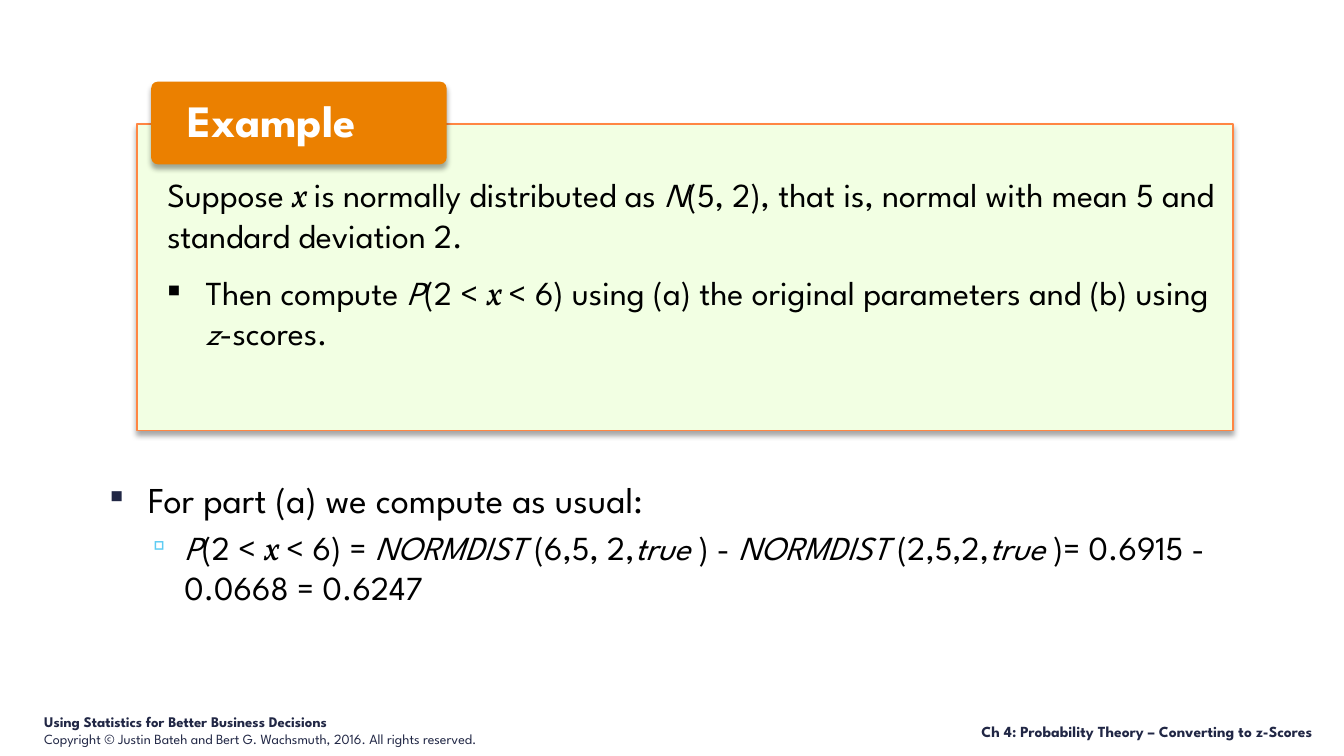
import pptx
import pptx.util
import pptx.dml.color
import pptx.enum.shapes
import pptx.enum.text
import pptx.oxml.ns
import lxml.etree
from dataclasses import dataclass

Inches = pptx.util.Inches
Pt = pptx.util.Pt
ANCHOR = pptx.enum.text.MSO_ANCHOR
SHAPE = pptx.enum.shapes.MSO_SHAPE


@dataclass(frozen=True)
class Theme:
    sans: str = "League Spartan"
    serif: str = "Vollkorn"
    ink: str = "000000"
    navy: str = "212745"
    sky: str = "5ECCF3"
    white: str = "FFFFFF"
    orange: str = "EB8000"
    border: str = "FF8643"
    panel: str = "F2FFE3"
    title: float = 32
    lead: float = 26
    body: float = 24
    chapter: float = 11
    book: float = 10.5
    rights: float = 10


THEME = Theme()
PLAIN, BOLD, ITALIC, VARIABLE = "plain", "bold", "italic", "variable"

EXAMPLE = [
    dict(runs=[("Suppose ", PLAIN), ("x ", VARIABLE),
               ("is normally distributed as ", PLAIN), ("N", ITALIC),
               ("(5, 2), that is, normal with mean 5 and standard deviation 2.", PLAIN)],
         before=6, after=6),
    dict(runs=[("Then compute ", PLAIN), ("P", ITALIC), ("(2 < ", PLAIN), ("x ", VARIABLE),
               ("< 6) using (a) the original parameters and (b) using ", PLAIN),
               ("z", ITALIC), ("-scores.", PLAIN)],
         before=6, after=6, bullet=("▪", THEME.ink, 100), indent=(0.38, -0.38)),
]
TAB = [dict(runs=[("Example", BOLD)], size=THEME.title, color=THEME.white, line=0.9)]
SOLUTION = [
    dict(runs=[("For part (a) we compute as usual:", PLAIN)], size=THEME.lead,
         before=7, bullet=("▪", THEME.navy, 95), indent=(0.45, -0.38)),
    dict(runs=[("P", ITALIC), ("(2 < ", PLAIN), ("x ", VARIABLE), ("< 6) = ", PLAIN),
               ("NORMDIST ", ITALIC), ("(6,5, 2,", PLAIN), ("true ", ITALIC), (") - ", PLAIN),
               ("NORMDIST ", ITALIC), ("(2,5,2,", PLAIN), ("true ", ITALIC),
               (")= 0.6915 - 0.0668 = 0.6247", PLAIN)],
         level=1, before=4.8, bullet=("▫", THEME.sky, 90), indent=(0.81, -0.31)),
]
BOOK = [
    dict(runs=[("Using Statistics for Better Business Decisions", BOLD)],
         size=THEME.book, color=THEME.navy),
    dict(runs=[("Copyright © Justin Bateh and Bert G. Wachsmuth, 2016. All rights reserved.", PLAIN)],
         size=THEME.rights, color=THEME.navy, after=1),
]
CHAPTER = [dict(runs=[("Ch 4: Probability Theory – Converting to z-Scores", BOLD)],
                size=THEME.chapter, color=THEME.navy, align=pptx.enum.text.PP_ALIGN.RIGHT)]


def rgb(value):
    return pptx.dml.color.RGBColor.from_string(value)


def add_element(parent, tag, **attributes):
    child = lxml.etree.SubElement(parent, pptx.oxml.ns.qn(tag))
    for name, value in attributes.items():
        child.set(name, str(value))
    return child


def add_bullet(para, bullet, indent):
    char, color, percent = bullet
    left, first = indent
    properties = para._p.get_or_add_pPr()
    properties.set("marL", str(Inches(left)))
    properties.set("indent", str(Inches(first)))
    add_element(add_element(properties, "a:buClr"), "a:srgbClr", val=color)
    add_element(properties, "a:buSzPct", val=percent * 1000)
    add_element(properties, "a:buFont", typeface=THEME.sans)
    add_element(properties, "a:buChar", char=char)


def write_para(para, runs, size=THEME.body, color=THEME.ink, before=0, after=0, line=1.0,
               level=0, align=pptx.enum.text.PP_ALIGN.LEFT, bullet=None, indent=None):
    para.level, para.alignment, para.line_spacing = level, align, line
    para.space_before, para.space_after = Pt(before), Pt(after)
    if bullet:
        add_bullet(para, bullet, indent)
    for words, style in runs:
        span = para.add_run()
        span.text = words
        span.font.name = THEME.serif if style == VARIABLE else THEME.sans
        span.font.size = Pt(size)
        span.font.bold = style == BOLD
        span.font.italic = style in (ITALIC, VARIABLE)
        span.font.color.rgb = rgb(color)


def write(box, paragraphs, insets=(0.1, 0.05, 0.1, 0.05), anchor=ANCHOR.TOP):
    frame = box.text_frame
    frame.word_wrap = True
    frame.vertical_anchor = anchor
    (frame.margin_left, frame.margin_top,
     frame.margin_right, frame.margin_bottom) = map(Inches, insets)
    for index, content in enumerate(paragraphs):
        para = frame.add_paragraph() if index else frame.paragraphs[0]
        write_para(para, **content)


def add_card(page, kind, place, fill, border=None):
    card = page.shapes.add_shape(kind, *map(Inches, place))
    card.fill.solid()
    card.fill.fore_color.rgb = rgb(fill)
    if border:
        card.line.color.rgb = rgb(border)
        card.line.width = Pt(1)
    else:
        card.line.fill.background()
    card.shadow.inherit = False
    effects = card._element.spPr.find(pptx.oxml.ns.qn("a:effectLst"))
    shadow = add_element(effects, "a:outerShdw", blurRad=Pt(4), dist=Pt(3),
                         dir=90 * 60000, rotWithShape=0)
    add_element(add_element(shadow, "a:srgbClr", val="000000"), "a:alpha", val=35000)
    return card


def add_text(page, place, paragraphs, anchor=ANCHOR.TOP):
    write(page.shapes.add_textbox(*map(Inches, place)), paragraphs, anchor=anchor)


def main():
    deck = pptx.Presentation()
    deck.slide_width, deck.slide_height = Inches(13.33), Inches(7.5)
    page = deck.slides.add_slide(deck.slide_layouts[6])

    add_text(page, (0.34, 7.02, 5.28, 0.4), BOOK)
    panel = add_card(page, SHAPE.RECTANGLE, (1.36, 1.23, 10.87, 3.04), THEME.panel, THEME.border)
    write(panel, EXAMPLE, (0.3, 0.5, 0.1, 0))
    tab = add_card(page, SHAPE.ROUNDED_RECTANGLE, (1.5, 0.81, 2.93, 0.82), THEME.orange)
    tab.adjustments[0] = 0.08
    write(tab, TAB, (0.34, 0.04, 0.34, 0.04), ANCHOR.MIDDLE)
    add_text(page, (0.92, 4.68, 11.75, 2.01), SOLUTION)
    add_text(page, (6.5, 7.11, 6.62, 0.29), CHAPTER, ANCHOR.BOTTOM)

    deck.save("out.pptx")


if __name__ == "__main__":
    main()
